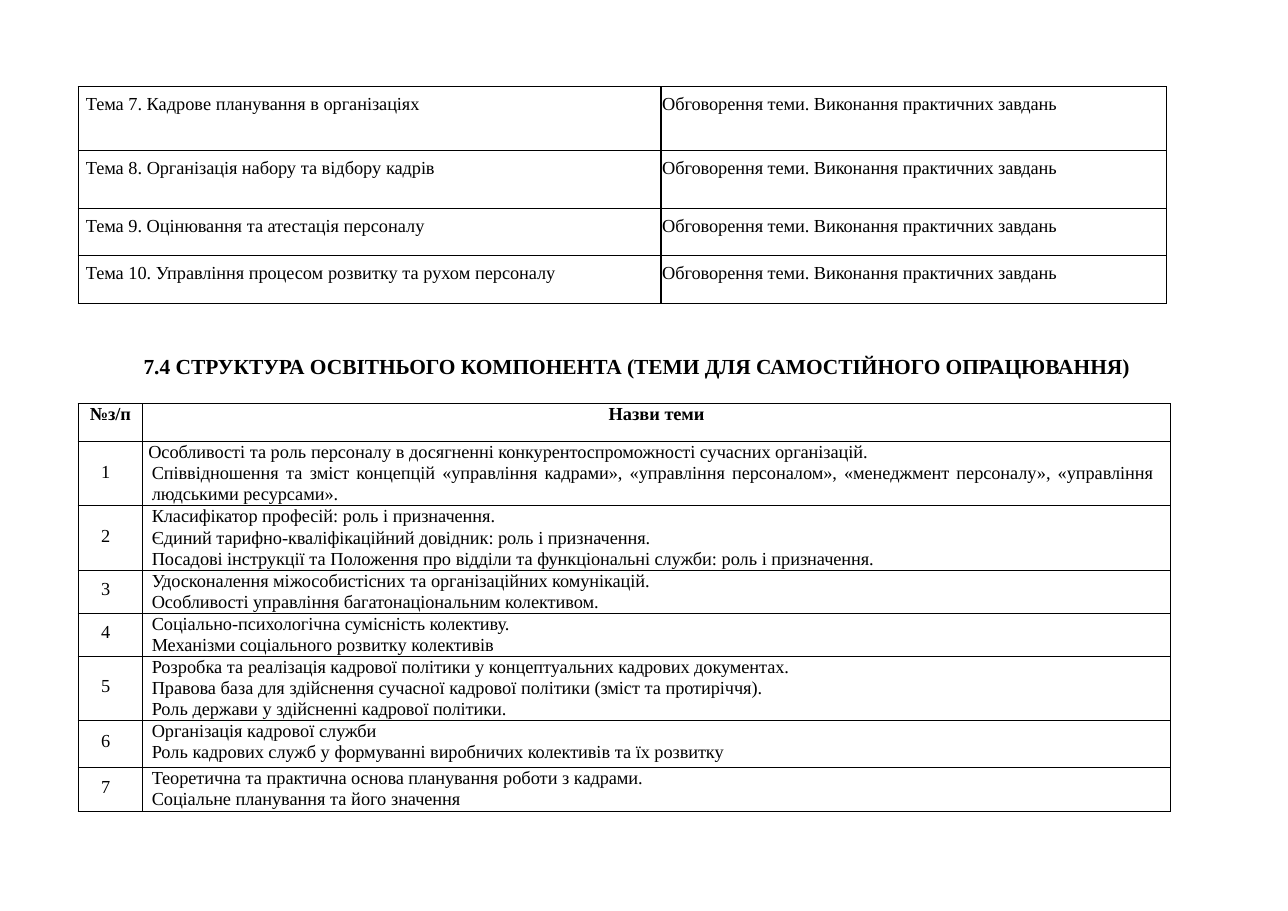
from typing import NamedTuple

from lxml.etree import SubElement
from pptx import Presentation
from pptx.dml.color import RGBColor
from pptx.enum.text import MSO_ANCHOR, PP_ALIGN
from pptx.oxml.ns import qn
from pptx.util import Cm, Pt

BLACK = RGBColor(0, 0, 0)
FONT = "Times New Roman"
THIN, THICK = Pt(0.5), Pt(1)
TABLE_LEFT = Cm(1.8)
ACTIVITY = "|Обговорення теми. Виконання практичних завдань"


class Line(NamedTuple):
    """Paragraph text, where each bar switches condensed spacing on or off."""
    text: str
    indent: float = 0.21
    alignment: PP_ALIGN = PP_ALIGN.LEFT


PRACTICE = [
    (1.47, "|Тема |7. Кадрове| планування |в |організаціях"),
    (1.34, "|Тема |8. |Організація набору |та відбору |кадрів"),
    (1.08, "|Тема |9.| Оцінювання |та| атестація |персоналу"),
    (1.1, "|Тема |10. |Управління процесом |розвитку та рухом |персоналу"),
]

SELF_STUDY = [
    (1.48, [
        Line("|Особливості |та роль |персоналу |в |досягненні конкурентоспроможності "
             "сучасних організацій.", 0.13),
        Line("|Співвідношення |та |зміст концепцій «управління кадрами», «управління "
             "персоналом», «менеджмент персоналу», «управління людськими ресурсами».",
             alignment=PP_ALIGN.JUSTIFY),
    ]),
    (1.48, [
        Line("|Класифікатор професій: |роль і |призначення."),
        Line("|Єдиний тарифно-кваліфікаційний довідник: роль |і |призначення."),
        Line("|Посадові інструкції |та |Положення |про |відділи |та |"
             "функціональні служби: |роль і| призначення."),
    ]),
    (0.99, [
        Line("|Удосконалення міжособистісних |та |організаційних комунікацій."),
        Line("|Особливості управління багатонаціональним колективом."),
    ]),
    (0.99, [
        Line("|Соціально-психологічна сумісність колективу."),
        Line("|Механізми соціального |розвитку |колективів"),
    ]),
    (1.48, [
        Line("Розробка та |реалізація кадрової політики |у |"
             "концептуальних кадрових документах."),
        Line("|Правова |база для |здійснення сучасної |кадрової |"
             "політики (зміст |та| протиріччя)."),
        Line("Роль |держави |у |здійсненні кадрової політики."),
    ]),
    (1.08, [
        Line("|Організація |кадрової |служби"),
        Line("Роль |кадрових служб |у |формуванні виробничих колективів| та| їх розвитку"),
    ]),
    (1.02, [
        Line("|Теоретична |та |практична основа планування |роботи з| кадрами."),
        Line("|Соціальне планування| та його |значення"),
    ]),
]


def add_runs(paragraph, text, size=12, bold=False):
    """Add the pieces of a text, every second one slightly condensed."""
    for index, piece in enumerate(text.split("|")):
        if piece:
            run = paragraph.add_run()
            run.text = piece
            run.font.name = FONT
            run.font.size = Pt(size)
            run.font.bold = bold
            run.font.color.rgb = BLACK
            if index % 2:
                run.font._element.set("spc", "-5")


def set_margins(box, left=0, top=0, right=0, bottom=0):
    """Set the inner margins of a cell or text frame in centimetres."""
    box.margin_left, box.margin_top = Cm(left), Cm(top)
    box.margin_right, box.margin_bottom = Cm(right), Cm(bottom)


def fill_cell(cell, lines, bold=False):
    """Write lines into a cell, one paragraph each."""
    frame = cell.text_frame
    for index, line in enumerate(lines):
        paragraph = frame.add_paragraph() if index else frame.paragraphs[0]
        paragraph.alignment = line.alignment
        paragraph.line_spacing = Pt(13.8)
        paragraph._p.get_or_add_pPr().set("marL", str(Cm(line.indent)))
        add_runs(paragraph, line.text, bold=bold)


def set_borders(cell, left=THIN, right=THIN, top=THIN, bottom=THIN):
    """Draw black cell borders and clear the fill."""
    properties = cell._tc.get_or_add_tcPr()
    for side, width in zip("LRTB", (left, right, top, bottom)):
        border = SubElement(properties, qn(f"a:ln{side}"), w=str(width))
        fill = SubElement(border, qn("a:solidFill"))
        SubElement(fill, qn("a:srgbClr"), val=str(BLACK))
    cell.fill.background()


def add_plain_table(slide, top, widths, heights):
    """Add a table without style bands and return it."""
    frame = slide.shapes.add_table(len(heights), len(widths), TABLE_LEFT, Cm(top),
                                   Cm(sum(widths)), Cm(sum(heights)))
    table = frame.table
    table.first_row = table.horz_banding = False
    for column, width in zip(table.columns, widths):
        column.width = Cm(width)
    for row, height in zip(table.rows, heights):
        row.height = Cm(height)
    return table


def add_practice_table(slide):
    """Add the table of topics with their practical activities."""
    table = add_plain_table(slide, 2, [13.44, 11.66], [height for height, _ in PRACTICE])
    for row, (_, topic) in enumerate(PRACTICE):
        topic_cell, activity_cell = table.cell(row, 0), table.cell(row, 1)
        for cell, line in ((topic_cell, Line(topic, 0.18)),
                           (activity_cell, Line(ACTIVITY, 0.03))):
            set_margins(cell, top=0.15)
            fill_cell(cell, [line])
        set_borders(topic_cell, right=THICK)
        set_borders(activity_cell, left=THICK, right=THICK)


def add_heading(slide):
    """Add the section heading between the tables."""
    box = slide.shapes.add_textbox(Cm(3.28), Cm(8.1), Cm(23.14), Cm(0.66))
    frame = box.text_frame
    frame.word_wrap = True
    set_margins(frame, left=0.03, top=0.03)
    add_runs(frame.paragraphs[0], "7.4 |СТРУКТУРА ОСВІТНЬОГО КОМПОНЕНТА "
             "(ТЕМИ ДЛЯ САМОСТІЙНОГО ОПРАЦЮВАННЯ)", size=14, bold=True)


def add_self_study_table(slide):
    """Add the numbered table of topics for self-study."""
    heights = [0.88] + [height for height, _ in SELF_STUDY]
    table = add_plain_table(slide, 9.3, [1.49, 23.7], heights)
    for cell in table.iter_cells():
        set_margins(cell)
        set_borders(cell)
    for column, title in enumerate(("|№з/п", "Назви |теми")):
        fill_cell(table.cell(0, column), [Line(title, 0, PP_ALIGN.CENTER)], bold=True)
    for number, (_, lines) in enumerate(SELF_STUDY, start=1):
        number_cell, topic_cell = table.cell(number, 0), table.cell(number, 1)
        number_cell.vertical_anchor = MSO_ANCHOR.MIDDLE
        set_margins(number_cell, right=0.22, bottom=0.1)
        fill_cell(number_cell, [Line(str(number), 0, PP_ALIGN.CENTER)])
        set_margins(topic_cell, right=0.38)
        fill_cell(topic_cell, lines)


def main():
    """Build the slide and save the presentation."""
    presentation = Presentation()
    presentation.slide_width = Cm(29.7)
    presentation.slide_height = Cm(21)
    slide = presentation.slides.add_slide(presentation.slide_layouts[6])
    add_heading(slide)
    add_self_study_table(slide)
    add_practice_table(slide)
    presentation.save("out.pptx")


if __name__ == "__main__":
    main()
